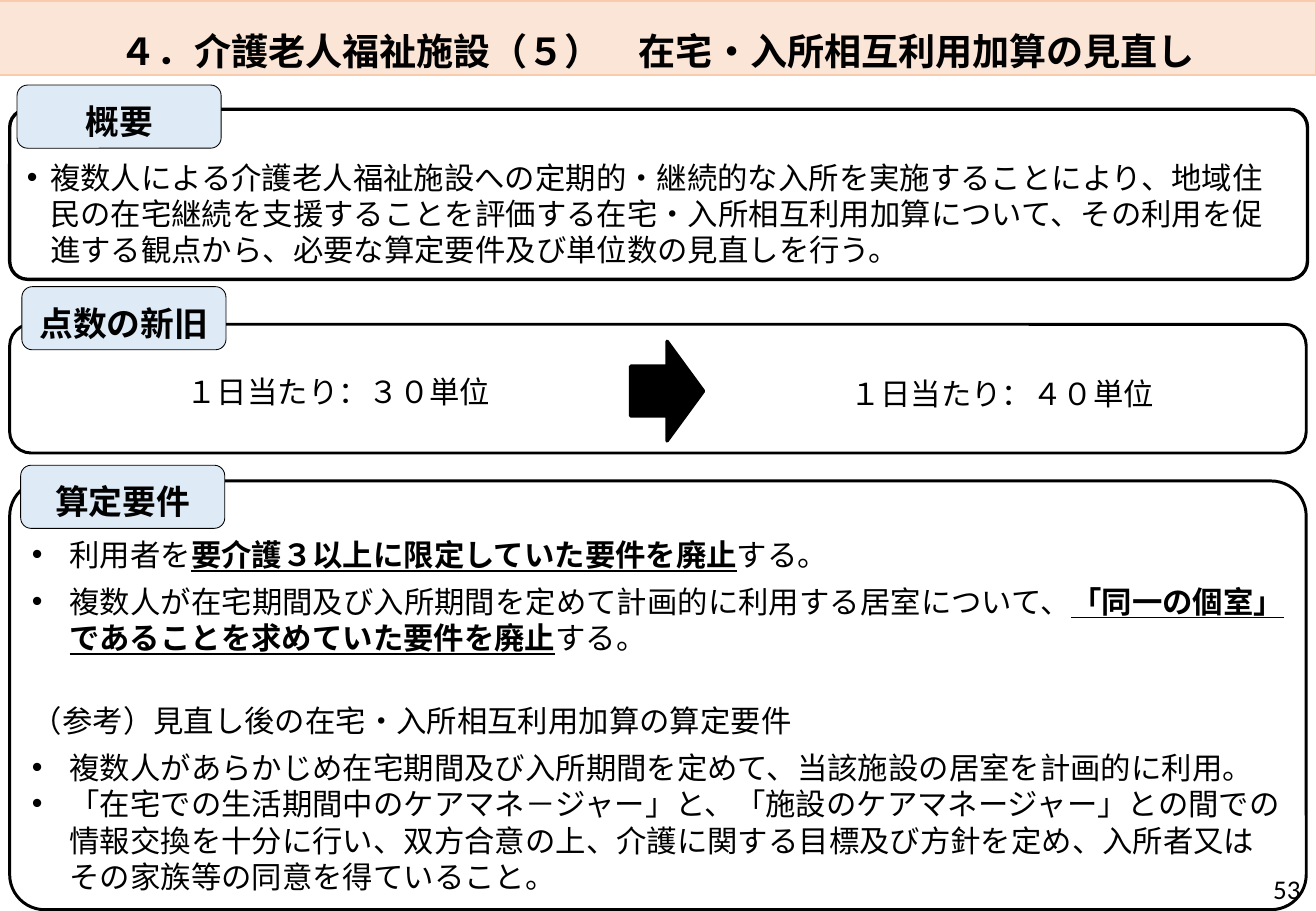
from lxml import etree
from pptx import Presentation
from pptx.dml.color import RGBColor
from pptx.enum.shapes import MSO_SHAPE
from pptx.enum.text import MSO_ANCHOR, PP_ALIGN
from pptx.oxml.ns import qn
from pptx.util import Inches, Pt

BLACK = RGBColor(0x00, 0x00, 0x00)
PEACH = RGBColor(0xFB, 0xE5, 0xD6)
PEACH_EDGE = RGBColor(0xF8, 0xCB, 0xAD)
PALE_BLUE = RGBColor(0xDE, 0xEB, 0xF7)
GOTHIC = "Noto Sans CJK JP"


class SlideBuilder:
    def __init__(self, slide):
        self.slide = slide

    def shape(self, kind, box, fill=None, line=BLACK, width=1.75, corner=None):
        shape = self.slide.shapes.add_shape(kind, *map(Inches, box))
        shape.shadow.inherit = False
        if fill is None:
            shape.fill.background()
        else:
            shape.fill.solid()
            shape.fill.fore_color.rgb = fill
        shape.line.color.rgb = line
        shape.line.width = Pt(width)
        if corner is not None:
            shape.adjustments[0] = corner
        return shape

    def frame(self, shape, anchor, bottom=0.05, top=0.05):
        text_frame = shape.text_frame
        text_frame.word_wrap = True
        text_frame.vertical_anchor = anchor
        text_frame.margin_top = Inches(top)
        text_frame.margin_bottom = Inches(bottom)
        return text_frame

    def fill_paragraph(self, paragraph, text, size=18, name="Calibri", east_asian=GOTHIC,
                       bold=None, align=PP_ALIGN.LEFT):
        """Parts of the text between asterisks become bold and underlined."""
        paragraph.alignment = align
        font = paragraph.font
        font.size, font.name, font.bold = Pt(size), name, bold
        font.color.rgb = BLACK
        properties = paragraph._p.get_or_add_pPr().find(qn("a:defRPr"))
        latin = properties.find(qn("a:latin"))
        latin.addnext(etree.Element(qn("a:ea"), typeface=east_asian))
        for index, part in enumerate(text.split("*")):
            run = paragraph.add_run()
            run.text = part
            if index % 2:
                run.font.bold = run.font.underline = True

    def bullet(self, paragraph, indent):
        properties = paragraph._p.get_or_add_pPr()
        properties.set("marL", str(Inches(indent)))
        properties.set("indent", str(-Inches(indent)))
        font = etree.Element(qn("a:buFont"), typeface="Arial")
        mark = etree.Element(qn("a:buChar"), char="•")
        default = properties.find(qn("a:defRPr"))
        default.addprevious(font)
        default.addprevious(mark)

    def heading(self, left, top, text):
        label = self.shape(MSO_SHAPE.ROUNDED_RECTANGLE, (left, top, 1.68, 0.52),
                           PALE_BLUE, width=0.5)
        text_frame = self.frame(label, MSO_ANCHOR.BOTTOM, 0.03)
        self.fill_paragraph(text_frame.paragraphs[0], text,
                            20, GOTHIC, bold=True, align=PP_ALIGN.CENTER)

    def text(self, box, text, size, align):
        text_box = self.slide.shapes.add_textbox(*map(Inches, box))
        text_frame = self.frame(text_box, MSO_ANCHOR.MIDDLE)
        self.fill_paragraph(text_frame.paragraphs[0], text, size, align=align)

    def panel(self, box, items, anchor, width=1.75, corner=None, top=0.05):
        """Draw a rounded box; items are (text, font, east_asian, indent, before, after, align)."""
        panel = self.shape(MSO_SHAPE.ROUNDED_RECTANGLE, box, width=width, corner=corner)
        text_frame = self.frame(panel, anchor, top=top)
        for index, (text, name, east_asian, indent, before, after, align) in enumerate(items):
            paragraph = text_frame.add_paragraph() if index else text_frame.paragraphs[0]
            paragraph.line_spacing = Pt(21.6)
            paragraph.space_before, paragraph.space_after = Pt(before), Pt(after)
            self.fill_paragraph(paragraph, text, name=name, east_asian=east_asian, align=align)
            if indent:
                self.bullet(paragraph, indent)


OVERVIEW = [
    ("複数人による介護老人福祉施設への定期的・継続的な入所を実施することにより、地域住民の在宅継続を支援することを評価する在宅・入所相互利用加算について、その利用を促進する観点から、必要な算定要件及び単位数の見直しを行う。",
     "Calibri", "Calibri", 0.19, 0, 0, PP_ALIGN.LEFT),
]
REQUIREMENTS = [
    ("利用者を*要介護３以上に限定していた要件を廃止*する。",
     "Arial", GOTHIC, 0.31, 0, 6, PP_ALIGN.JUSTIFY),
    ("複数人が在宅期間及び入所期間を定めて計画的に利用する居室について、*「同一の個室」であることを求めていた要件を廃止*する。",
     "Arial", GOTHIC, 0.31, 0, 6, PP_ALIGN.JUSTIFY),
    ("（参考）見直し後の在宅・入所相互利用加算の算定要件",
     GOTHIC, GOTHIC, 0, 21.6, 6, PP_ALIGN.JUSTIFY),
    ("複数人があらかじめ在宅期間及び入所期間を定めて、当該施設の居室を計画的に利用。",
     "Arial", GOTHIC, 0.31, 0, 0, PP_ALIGN.LEFT),
    ("「在宅での生活期間中のケアマネ－ジャー」と、「施設のケアマネージャー」との間での情報交換を十分に行い、双方合意の上、介護に関する目標及び方針を定め、入所者又はその家族等の同意を得ていること。",
     "Arial", GOTHIC, 0.31, 0, 0, PP_ALIGN.LEFT),
]


def main():
    presentation = Presentation()
    presentation.slide_width, presentation.slide_height = Inches(10.83), Inches(7.5)
    builder = SlideBuilder(presentation.slides.add_slide(presentation.slide_layouts[6]))

    title = builder.shape(MSO_SHAPE.RECTANGLE, (-0.01, 0.01, 10.84, 0.61),
                          PEACH, PEACH_EDGE, 1)
    title_frame = builder.frame(title, MSO_ANCHOR.BOTTOM, 0.02)
    builder.fill_paragraph(title_frame.paragraphs[0],
                           "４．介護老人福祉施設（５）　在宅・入所相互利用加算の見直し",
                           22, GOTHIC, bold=True, align=PP_ALIGN.CENTER)

    builder.panel((0.08, 0.9, 10.68, 1.4), OVERVIEW, MSO_ANCHOR.BOTTOM, 2, 0.106)
    builder.heading(0.14, 0.7, "概要")

    builder.panel((0.08, 2.67, 10.67, 1.06), [], MSO_ANCHOR.MIDDLE)
    builder.shape(MSO_SHAPE.RIGHT_ARROW, (5.19, 2.81, 0.6, 0.82), BLACK, width=2)
    builder.heading(0.18, 2.36, "点数の新旧")
    builder.text((0.39, 2.55, 4.79, 1.34), "１日当たり：３０単位", 18, PP_ALIGN.CENTER)
    builder.text((5.85, 2.57, 4.79, 1.34), "１日当たり：４０単位", 18, PP_ALIGN.CENTER)

    builder.panel((0.08, 3.96, 10.67, 3.53), REQUIREMENTS, MSO_ANCHOR.TOP,
                  corner=0.082, top=0.37)
    builder.heading(0.17, 3.83, "算定要件")
    builder.text((10.05, 7.17, 0.75, 0.29), "53", 16, PP_ALIGN.RIGHT)

    presentation.save("out.pptx")


if __name__ == "__main__":
    main()
